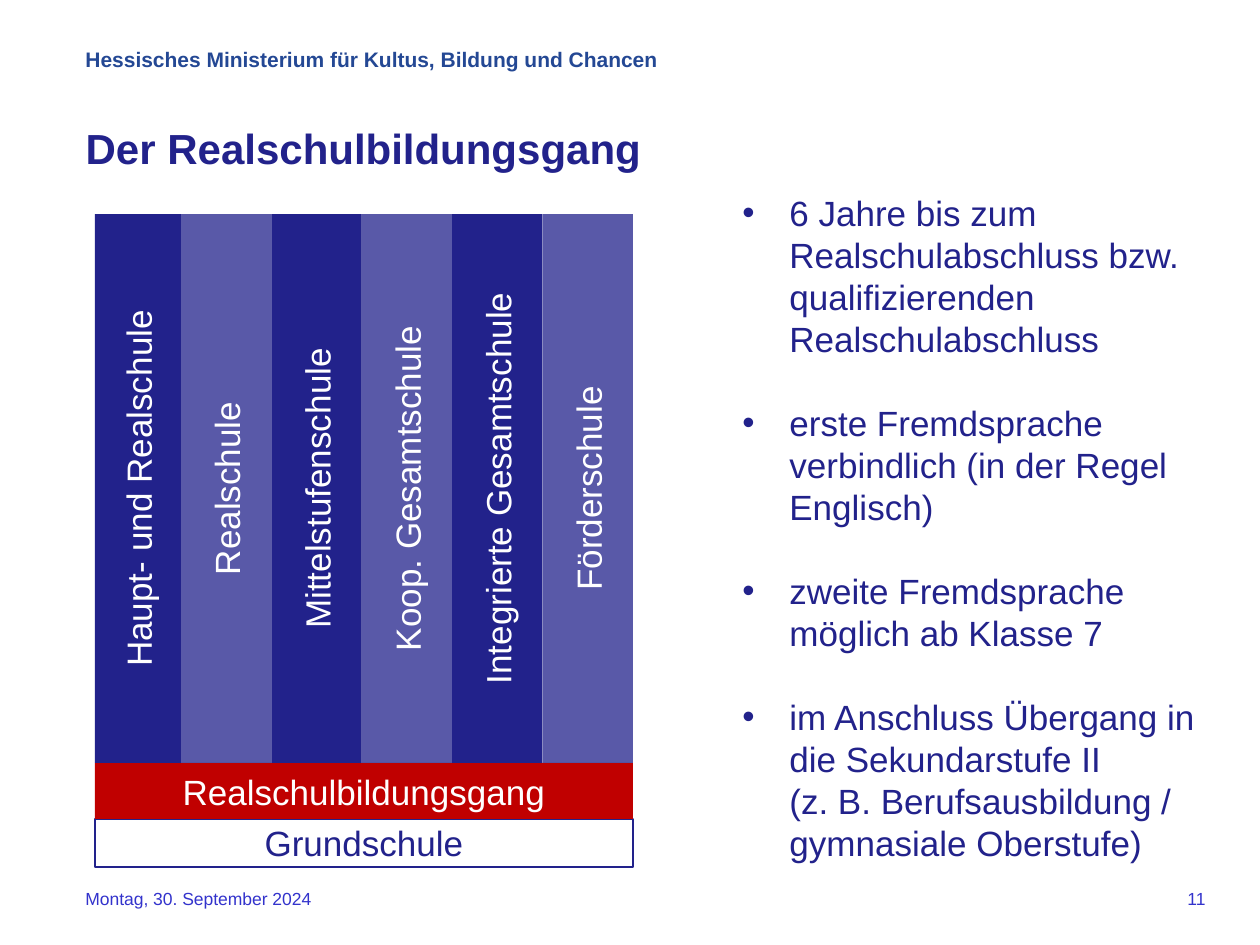
from lxml import etree
from pptx import Presentation
from pptx import util as u
from pptx.dml.color import RGBColor
from pptx.enum import shapes, text
from pptx.oxml import ns

PX = 914400 / 126
FONT = "Arial"
NAVY = RGBColor(0x22, 0x22, 0x8B)
HEADER_BLUE = RGBColor(0x24, 0x48, 0x94)
FOOTER_BLUE = RGBColor(0x33, 0x33, 0xCC)
RED = RGBColor(0xC0, 0x00, 0x00)
WHITE = RGBColor(0xFF, 0xFF, 0xFF)

SCHOOLS = ["Haupt- und Realschule", "Realschule", "Mittelstufenschule",
           "Koop. Gesamtschule", "Integrierte Gesamtschule", "Förderschule"]
FACTS = [
    ["6 Jahre bis zum Realschulabschluss bzw. qualifizierenden Realschulabschluss"],
    ["erste Fremdsprache verbindlich (in der Regel Englisch)"],
    ["zweite Fremdsprache möglich ab Klasse 7"],
    ["im Anschluss Übergang in die Sekundarstufe II ",
     "(z. B. Berufsausbildung / gymnasiale Oberstufe)"],
]


def px(length):
    return u.Emu(round(length * PX))


def place(box):
    return [px(length) for length in box]


def add_run(paragraph, words, size, color, bold=False):
    run = paragraph.add_run()
    run.text = words
    run.font.name = FONT
    run.font.size = u.Pt(size)
    run.font.bold = bold
    run.font.color.rgb = color


def add_label(slide, box, words, size, color, bold=False, align=text.PP_ALIGN.LEFT):
    frame = slide.shapes.add_textbox(*place(box)).text_frame
    frame.word_wrap = True
    paragraph = frame.paragraphs[0]
    paragraph.alignment = align
    add_run(paragraph, words, size, color, bold)


def add_title(slide, box, words):
    title = slide.shapes.title
    title.left, title.top, title.width, title.height = place(box)
    frame = title.text_frame
    frame.vertical_anchor = text.MSO_ANCHOR.TOP
    frame.auto_size = text.MSO_AUTO_SIZE.NONE
    paragraph = frame.paragraphs[0]
    paragraph.alignment = text.PP_ALIGN.LEFT
    add_run(paragraph, words, 24, NAVY, True)


def add_block(group, box, words, fill, color=WHITE, line=None, alpha=None, upright=False):
    shape = group.shapes.add_shape(shapes.MSO_SHAPE.RECTANGLE, *place(box))
    shape.shadow.inherit = False
    shape.fill.solid()
    shape.fill.fore_color.rgb = fill
    if alpha:
        srgb = shape.fill._xPr.find(".//" + ns.qn("a:srgbClr"))
        etree.SubElement(srgb, ns.qn("a:alpha"), val=str(alpha * 1000))
    if line is None:
        shape.line.fill.background()
    else:
        shape.line.color.rgb = line
        shape.line.width = u.Pt(0.75)
    frame = shape.text_frame
    frame.word_wrap = True
    frame.vertical_anchor = text.MSO_ANCHOR.MIDDLE
    if upright:
        frame._txBody.bodyPr.set("vert", "vert270")
    paragraph = frame.paragraphs[0]
    paragraph.alignment = text.PP_ALIGN.CENTER
    add_run(paragraph, words, 20, color)


def add_school_diagram(slide, box):
    left, top, width, height = box
    group = slide.shapes.add_group_shape()
    base_height, track_height, first_width = 48, 56, 86
    column_height = height - base_height - track_height
    column_width = (width - first_width) / (len(SCHOOLS) - 1)

    # Foundation and educational track
    add_block(group, (left, top + height - base_height, width, base_height),
              "Grundschule", WHITE, NAVY, line=NAVY)
    add_block(group, (left, top + column_height, width, track_height),
              "Realschulbildungsgang", RED)

    # School types in alternating tints
    x = left
    for index, school in enumerate(SCHOOLS):
        this_width = column_width if index else first_width
        add_block(group, (x, top, this_width, column_height), school, NAVY,
                  alpha=75 if index % 2 else None, upright=True)
        x += this_width


def add_facts(slide, box):
    frame = slide.shapes.add_textbox(*place(box)).text_frame
    frame.word_wrap = True
    for index, lines in enumerate(FACTS):
        paragraph = frame.add_paragraph() if index else frame.paragraphs[0]
        properties = paragraph._p.get_or_add_pPr()
        properties.set("marL", str(px(47)))
        properties.set("indent", str(-px(47)))
        etree.SubElement(properties, ns.qn("a:buFont"), typeface=FONT)
        etree.SubElement(properties, ns.qn("a:buChar"), char="•")
        paragraph.line_spacing = u.Pt(24)
        if index:
            paragraph.space_before = u.Pt(24)
        for number, line in enumerate(lines):
            if number:
                paragraph.add_line_break()
            add_run(paragraph, line, 20, NAVY)


def main():
    presentation = Presentation()
    presentation.slide_width, presentation.slide_height = px(1260), px(945)
    slide = presentation.slides.add_slide(presentation.slide_layouts[5])

    # Header and title
    add_label(slide, (73, 40, 1013, 66),
              "Hessisches Ministerium für Kultus, Bildung und Chancen",
              12, HEADER_BLUE, bold=True)
    add_title(slide, (73, 116, 1071, 158), "Der Realschulbildungsgang")

    # Content
    add_school_diagram(slide, (95, 214, 538, 653))
    add_facts(slide, (730, 185, 486, 692))

    # Footer
    add_label(slide, (73, 882, 406, 53), "Montag, 30. September 2024", 10, FOOTER_BLUE)
    add_label(slide, (903, 882, 315, 42), "11", 10, FOOTER_BLUE,
              align=text.PP_ALIGN.RIGHT)

    presentation.save("out.pptx")


if __name__ == "__main__":
    main()
